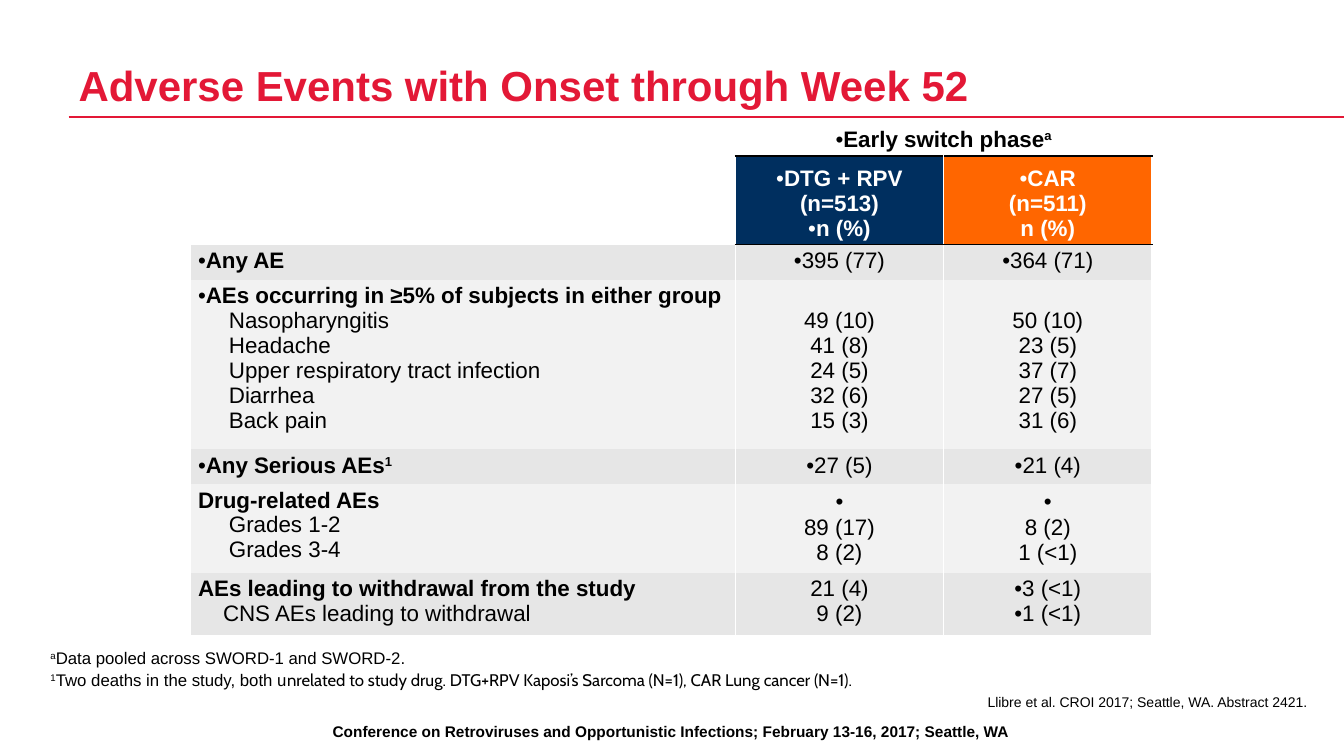
from lxml import etree
from pptx import Presentation
from pptx.dml.color import RGBColor
from pptx.enum.shapes import MSO_CONNECTOR
from pptx.enum.text import MSO_ANCHOR, PP_ALIGN
from pptx.oxml.ns import qn
from pptx.util import Cm, Pt

RED = RGBColor(0xE3, 0x18, 0x36)
BLACK = RGBColor(0x00, 0x00, 0x00)
WHITE = RGBColor(0xFF, 0xFF, 0xFF)
NAVY = RGBColor(0x00, 0x2F, 0x5F)
ORANGE = RGBColor(0xFF, 0x66, 0x00)
GREY = RGBColor(0xE6, 0xE6, 0xE6)
PALE = RGBColor(0xF2, 0xF2, 0xF2)

STRAIGHT = MSO_CONNECTOR.STRAIGHT
TOP, BOTTOM = MSO_ANCHOR.TOP, MSO_ANCHOR.BOTTOM
LEFT, CENTER, RIGHT = PP_ALIGN.LEFT, PP_ALIGN.CENTER, PP_ALIGN.RIGHT

NO_STYLE = "{2D5ABB26-0587-4C30-8999-92F81FD0307C}"
COLUMN_WIDTHS = (13.73, 5.25, 5.25)
ROW_HEIGHTS = (0.88, 2.24, 0.88, 4.25, 0.88, 2.24, 1.56)
LINE_STEP = 0.63
EVENT_INDENT = 0.78

# Each line is (text, bold, bulleted, indent in cm); "^" starts a superscript
PHASE = [("Early switch phase^a", True, True, 0)]
ARMS = [
    (NAVY, [("DTG + RPV\n(n=513)", True, True, 0), ("n (%)", True, True, 0)]),
    (ORANGE, [("CAR\n(n=511)", True, True, 0), ("n (%)", True, False, 0)]),
]


def plain(*texts, indent=0):
    return [(text, False, False, indent) for text in texts]


def bulleted(*texts, bold=False):
    return [(text, bold, True, 0) for text in texts]


# Label, DTG + RPV, CAR
EVENT_ROWS = [
    (bulleted("Any AE", bold=True), bulleted("395 (77)"), bulleted("364 (71)")),
    (bulleted("AEs occurring in ≥5% of subjects in either group", bold=True)
     + plain("Nasopharyngitis", "Headache", "Upper respiratory tract infection",
             "Diarrhea", "Back pain", indent=EVENT_INDENT),
     plain("49 (10)", "41 (8)", "24 (5)", "32 (6)", "15 (3)"),
     plain("50 (10)", "23 (5)", "37 (7)", "27 (5)", "31 (6)")),
    (bulleted("Any Serious AEs^1", bold=True), bulleted("27 (5)"), bulleted("21 (4)")),
    ([("Drug-related AEs", True, False, 0)]
     + plain("Grades 1-2", "Grades 3-4", indent=EVENT_INDENT),
     bulleted("\n89 (17)\n8 (2)"), bulleted("\n8 (2)\n1 (<1)")),
    ([("AEs leading to withdrawal from the study", True, False, 0)]
     + plain("CNS AEs leading to withdrawal", indent=0.63),
     plain("21 (4)", "9 (2)"), bulleted("3 (<1)", "1 (<1)")),
]


def add_run(paragraph, text, size, color=BLACK, bold=False, font="Arial", raised=False):
    run = paragraph.add_run()
    run.text = text
    run.font.name = font
    run.font.size = Pt(size)
    run.font.bold = bold
    run.font.color.rgb = color
    if raised:
        run._r.get_or_add_rPr().set("baseline", "30000")


def add_text(slide, box, runs, align=LEFT, anchor=TOP, inset=(0, 0), spacing=None):
    """Add a one-paragraph text box; each run is a dict for add_run."""
    frame = slide.shapes.add_textbox(*(Cm(length) for length in box)).text_frame
    frame.word_wrap = True
    frame.vertical_anchor = anchor
    frame.margin_left = frame.margin_right = Cm(inset[0])
    frame.margin_top = frame.margin_bottom = Cm(inset[1])
    paragraph = frame.paragraphs[0]
    paragraph.alignment = align
    if spacing:
        paragraph.line_spacing = Pt(spacing)
    for run in runs:
        add_run(paragraph, **run)


def add_rule(slide):
    rule = slide.shapes.add_connector(STRAIGHT, Cm(1.73), Cm(2.95), Cm(33.87), Cm(2.95))
    rule.line.color.rgb = RED
    rule.line.width = Pt(2)
    etree.SubElement(rule._element.spPr, qn("a:effectLst"))


def set_borders(cell, **sides):
    """Draw 1 pt cell borders; they must precede the fill in the cell XML."""
    properties = cell._tc.get_or_add_tcPr()
    ordered = [side for side in ("L", "R", "T", "B") if side in sides]
    for position, side in enumerate(ordered):
        line = etree.Element(qn("a:ln" + side), w="12700")
        fill = etree.SubElement(line, qn("a:solidFill"))
        etree.SubElement(fill, qn("a:srgbClr"), val=str(sides[side]))
        properties.insert(position, line)


def fill_cell(cell, lines, fill=None, color=BLACK, align=CENTER, anchor=TOP, skip=0):
    cell.margin_left = cell.margin_right = Cm(0.19)
    cell.margin_top = Cm(0.1 + skip * LINE_STEP)
    cell.margin_bottom = Cm(0.1)
    cell.vertical_anchor = anchor
    if fill:
        cell.fill.solid()
        cell.fill.fore_color.rgb = fill
    else:
        cell.fill.background()
    frame = cell.text_frame
    for number, (text, bold, bullet, indent) in enumerate(lines):
        paragraph = frame.add_paragraph() if number else frame.paragraphs[0]
        paragraph.alignment = align
        properties = paragraph._p.get_or_add_pPr()
        properties.set("marL", str(Cm(indent)))
        properties.set("indent", "0")
        if bullet:
            etree.SubElement(properties, qn("a:buFont"), typeface="Arial")
            etree.SubElement(properties, qn("a:buChar"), char="•")
        else:
            etree.SubElement(properties, qn("a:buNone"))
        body, _, superscript = text.partition("^")
        for part_number, part in enumerate(body.split("\n")):
            if part_number:
                paragraph.add_line_break()
            if part:
                add_run(paragraph, part, 16, color, bold)
        if superscript:
            add_run(paragraph, superscript, 16, color, bold, raised=True)
    # Line breaks take the text size too
    for line_break in frame._txBody.iter(qn("a:br")):
        line_break.insert(0, etree.Element(qn("a:rPr"), sz="1600"))


def add_events_table(slide):
    table = slide.shapes.add_table(
        len(ROW_HEIGHTS), len(COLUMN_WIDTHS), Cm(4.8), Cm(3.05),
        Cm(sum(COLUMN_WIDTHS)), Cm(sum(ROW_HEIGHTS))).table
    table._tbl.tblPr.find(qn("a:tableStyleId")).text = NO_STYLE
    table.first_row = table.horz_banding = False
    for column, width in zip(table.columns, COLUMN_WIDTHS):
        column.width = Cm(width)
    for row, height in zip(table.rows, ROW_HEIGHTS):
        row.height = Cm(height)

    # Heading rows
    for row in range(2):
        corner = table.cell(row, 0)
        corner.margin_top = corner.margin_bottom = 0
        corner.fill.background()
    phase = table.cell(0, 1)
    phase.merge(table.cell(0, 2))
    fill_cell(phase, PHASE, anchor=BOTTOM)
    for column, (arm_color, lines) in enumerate(ARMS, start=1):
        fill_cell(table.cell(1, column), lines, arm_color, WHITE, anchor=BOTTOM)

    # Event rows; counts without a heading line start one line lower
    for row, contents in enumerate(EVENT_ROWS, start=2):
        shade = PALE if row % 2 else GREY
        for column, lines in enumerate(contents):
            skip = len(contents[0]) - len(lines) if len(lines) == 5 else 0
            fill_cell(table.cell(row, column), lines, shade,
                      align=CENTER if column else LEFT, skip=skip)

    # White column edges, with a black line below the phase heading
    for row in range(len(ROW_HEIGHTS)):
        for column in range(len(COLUMN_WIDTHS)):
            sides = {"L": WHITE, "R": WHITE}
            if column and row < 2:
                sides["T" if row else "B"] = BLACK
            set_borders(table.cell(row, column), **sides)


def main():
    presentation = Presentation()
    presentation.slide_width, presentation.slide_height = Cm(33.87), Cm(19.05)
    slide = presentation.slides.add_slide(presentation.slide_layouts[6])

    # Conference footer, title and rule
    add_text(slide, (0.23, 18.06, 33.38, 0.74),
             [dict(text="Conference on Retroviruses and Opportunistic Infections; "
                        "February 13-16, 2017; Seattle, WA", size=11, bold=True)],
             align=CENTER, inset=(0.25, 0.13))
    add_rule(slide)
    add_text(slide, (1.98, 0.43, 27.94, 2.34),
             [dict(text="Adverse Events with Onset through Week 52",
                   size=30, color=RED, bold=True)], anchor=BOTTOM, spacing=35)

    # Citation and footnotes
    add_text(slide, (1.98, 17.48, 30.96, 0.51),
             [dict(text="Llibre et al. CROI 2017; Seattle, WA. Abstract 2421.", size=10)],
             align=RIGHT)
    add_text(slide, (1.27, 16.31, 30.96, 0.51),
             [dict(text="a", size=12, raised=True),
              dict(text="Data pooled across SWORD-1 and SWORD-2.", size=12)], anchor=BOTTOM)
    add_events_table(slide)
    add_text(slide, (1.27, 16.87, 24.49, 0.51),
             [dict(text="1", size=12, raised=True),
              dict(text="Two deaths in the study, both u", size=12),
              dict(text="nrelated to study drug. DTG+RPV Kaposi’s Sarcoma (N=1), "
                        "CAR Lung cancer (N=1).", size=12, font="Cabin")])

    presentation.save("out.pptx")


if __name__ == "__main__":
    main()
